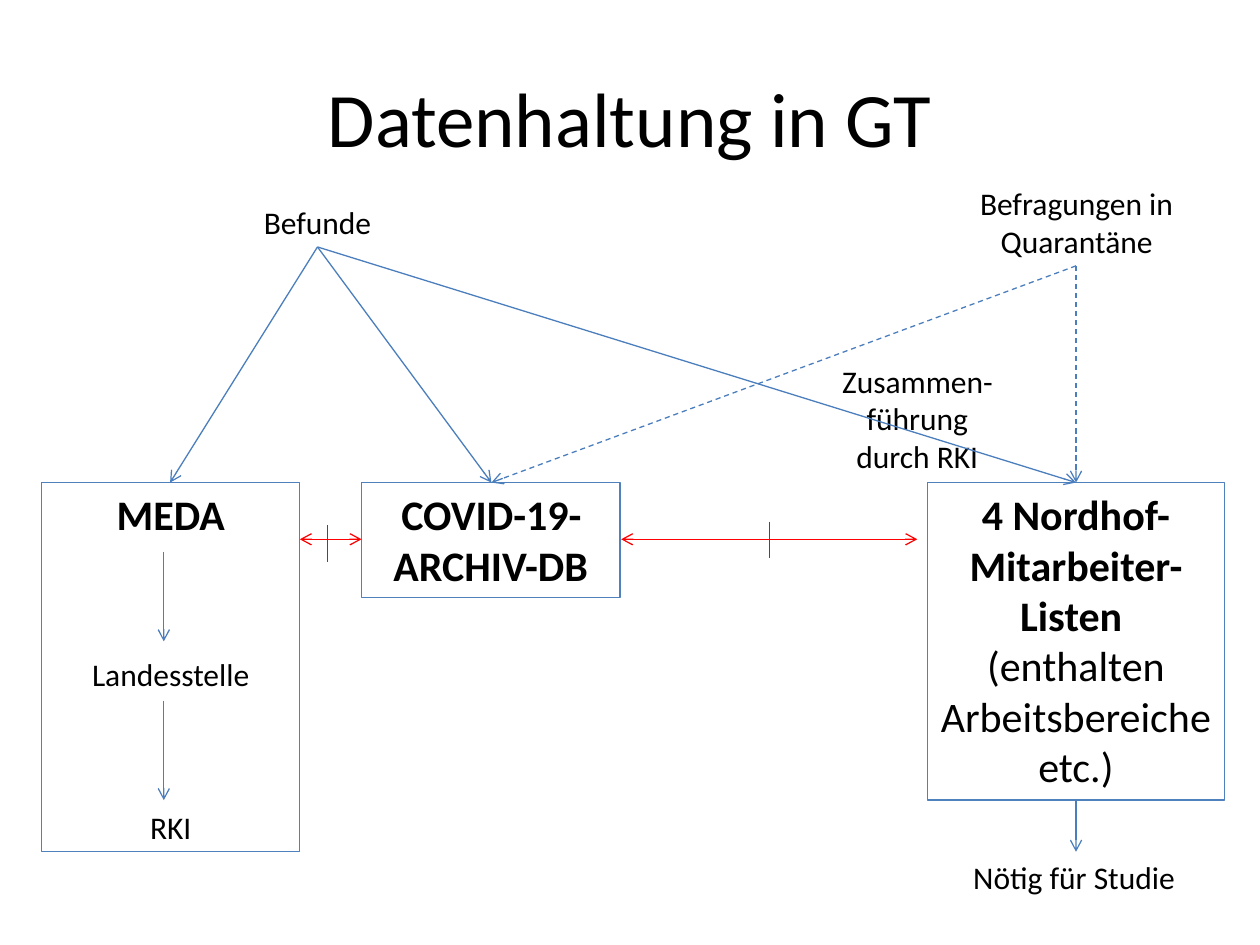
from lxml import etree
from pptx import Presentation
from pptx.dml.color import RGBColor
from pptx.enum import dml, shapes, text
from pptx.oxml import ns
from pptx.util import Inches, Pt

BLUE, EDGE, RED, BLACK = "4B7EBC", "4F81BD", "FF0000", "000000"

deck = Presentation()
deck.slide_width, deck.slide_height = Inches(10), Inches(7.5)
slide = deck.slides.add_slide(deck.slide_layouts[6])


def write(left, top, width, height, lines, edge=None):
    """Add a centred text box; each line is (words, size, bold, space before)."""
    box = slide.shapes.add_textbox(*map(Inches, (left, top, width, height)))
    if edge:
        box.line.color.rgb = RGBColor.from_string(edge)
        box.line.width = Pt(0.75)
    frame = box.text_frame
    frame.word_wrap = True
    for i, (words, size, bold, gap) in enumerate(lines):
        par = frame.paragraphs[0] if i == 0 else frame.add_paragraph()
        par.text = words
        par.alignment = text.PP_ALIGN.CENTER
        par.space_before = Pt(gap)
        par.font.name, par.font.size, par.font.bold = "Calibri", Pt(size), bold
        par.font.color.rgb = RGBColor.from_string(BLACK)
    return frame


def link(start, end, color=BLUE, ends=("tailEnd",), dash=False):
    """Add a straight line with open arrowheads at the named ends."""
    line = slide.shapes.add_connector(
        shapes.MSO_CONNECTOR.STRAIGHT, *map(Inches, start + end))
    line.line.color.rgb = RGBColor.from_string(color)
    line.line.width = Pt(0.75)
    if dash:
        line.line.dash_style = dml.MSO_LINE.DASH
    for end_tag in ends:
        head = etree.SubElement(line.line._get_or_add_ln(), ns.qn("a:" + end_tag))
        head.set("type", "arrow")
    etree.SubElement(line._element.spPr, ns.qn("a:effectLst"))


title = write(0.5, 0.3, 9, 1.25, [("Datenhaltung in GT", 44, False, 0)])
title.vertical_anchor = text.MSO_ANCHOR.MIDDLE

# Data stores
top = 3.83
write(0.33, top, 2.05, 2.93, [
    ("MEDA", 24, True, 0),
    ("Landesstelle", 18, False, 66),
    ("RKI", 18, False, 66),
], EDGE)
write(2.87, top, 2.05, 0.91, [("COVID-19-ARCHIV-DB", 24, True, 0)], EDGE)
lists = write(7.36, top, 2.36, 2.52,
              [("4 Nordhof-Mitarbeiter-Listen ", 24, True, 0)], EDGE)
par = lists.paragraphs[0]
par.add_line_break()
extra = par.add_run()
extra.text = "(enthalten Arbeitsbereiche etc.)"
extra.font.bold = False

# Plain labels
for left, y, width, height, words in [
    (6.57, 2.82, 1.42, 1.01, "Zusammen-führung durch RKI"),
    (1.93, 1.56, 1.18, 0.4, "Befunde"),
    (7.38, 1.41, 2.33, 0.71, "Befragungen in Quarantäne"),
    (7.36, 6.76, 2.33, 0.4, "Nötig für Studie"),
]:
    write(left, y, width, height, [(words, 18, False, 0)])

# Flow from the sources into the stores
for x in (1.35, 3.9, 8.54):
    link((2.52, 1.96), (x, top))
for x in (8.54, 3.9):
    link((8.54, 2.11), (x, top), dash=True)

# Reporting steps
for x, y, end in [(1.3, 4.38, 5.09), (1.3, 5.56, 6.35), (8.54, 6.35, 6.76)]:
    link((x, y), (x, end))

# Crossed-out exchange between the stores
for left, right, mid, y in [(2.38, 2.87, 2.6, 4.17), (4.93, 7.28, 6.11, 4.14)]:
    link((left, 4.28), (right, 4.28), RED, ("headEnd", "tailEnd"))
    link((mid, y), (mid, y + 0.29), RED, ())

deck.save("out.pptx")
